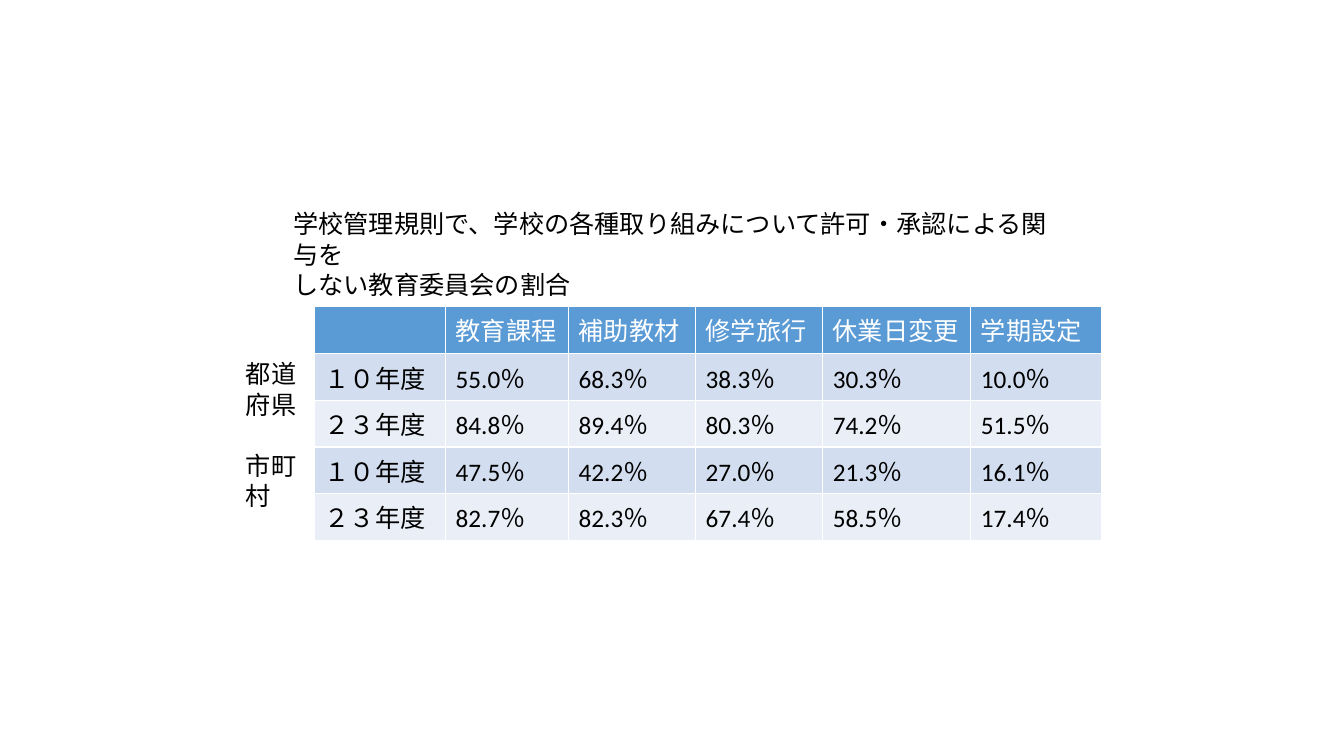
from dataclasses import dataclass

from pptx import Presentation
from pptx.dml.color import RGBColor
from pptx.util import Emu, Pt

EMU_PER_PX = 9144  # 100 px to the inch
FONT = "Calibri"
FONT_SIZE = Pt(18)
COLORS = {
    "header": "5B9BD5",
    "header_text": "FFFFFF",
    "text": "000000",
    "odd_row": "D2DEEF",
    "even_row": "EAEFF7",
}


@dataclass(frozen=True)
class Box:
    left: int
    top: int
    width: int
    height: int


@dataclass(frozen=True)
class TextBlock:
    box: Box
    lines: tuple[str, ...]
    gap: int = 0  # points before each line after the first


TABLE_BOX = Box(312, 304, 781, 231)
COLUMN_WIDTHS = (130, 122, 126, 126, 147, 130)
ROW_HEIGHTS = (47, 46, 46, 46, 46)
HEADINGS = ("", "教育課程", "補助教材", "修学旅行", "休業日変更", "学期設定")
RATES = (
    ("１０年度", 55.0, 68.3, 38.3, 30.3, 10.0),
    ("２３年度", 84.8, 89.4, 80.3, 74.2, 51.5),
    ("１０年度", 47.5, 42.2, 27.0, 21.3, 16.1),
    ("２３年度", 82.7, 82.3, 67.4, 58.5, 17.4),
)
TEXT_BLOCKS = (
    TextBlock(
        Box(281, 202, 779, 71),
        ("学校管理規則で、学校の各種取り組みについて許可・承認による関与を",
         "しない教育委員会の割合"),
    ),
    TextBlock(Box(234, 351, 71, 162), ("都道府県", "市町村"), gap=22),
)


def px(length: int) -> Emu:
    return Emu(length * EMU_PER_PX)


def place(box: Box) -> tuple[Emu, Emu, Emu, Emu]:
    return px(box.left), px(box.top), px(box.width), px(box.height)


def color(key: str) -> RGBColor:
    return RGBColor.from_string(COLORS[key])


def format_text(paragraph, color_key: str) -> None:
    for font in [paragraph.font] + [run.font for run in paragraph.runs]:
        font.name = FONT
        font.size = FONT_SIZE
        font.bold = False
        font.color.rgb = color(color_key)


def add_text(slide, block: TextBlock) -> None:
    frame = slide.shapes.add_textbox(*place(block.box)).text_frame
    frame.word_wrap = True
    frame.text = "\n".join(block.lines)
    for index, paragraph in enumerate(frame.paragraphs):
        format_text(paragraph, "text")
        if index and block.gap:
            paragraph.space_before = Pt(block.gap)


def add_rate_table(slide) -> None:
    rows = [HEADINGS] + [
        (year, *(f"{rate:.1f}％" for rate in rates)) for year, *rates in RATES
    ]
    table = slide.shapes.add_table(
        len(rows), len(HEADINGS), *place(TABLE_BOX)
    ).table
    for column, width in zip(table.columns, COLUMN_WIDTHS):
        column.width = px(width)
    for row, height in zip(table.rows, ROW_HEIGHTS):
        row.height = px(height)

    for row_index, texts in enumerate(rows):
        if row_index == 0:
            fill_key, text_key = "header", "header_text"
        else:
            fill_key = "odd_row" if row_index % 2 else "even_row"
            text_key = "text"
        for column_index, text in enumerate(texts):
            cell = table.cell(row_index, column_index)
            cell.fill.solid()
            cell.fill.fore_color.rgb = color(fill_key)
            cell.text_frame.text = text
            format_text(cell.text_frame.paragraphs[0], text_key)


def main() -> None:
    presentation = Presentation()
    presentation.slide_width = px(1333)
    presentation.slide_height = px(750)
    slide = presentation.slides.add_slide(presentation.slide_layouts[6])
    add_rate_table(slide)
    for block in TEXT_BLOCKS:
        add_text(slide, block)
    presentation.save("out.pptx")


if __name__ == "__main__":
    main()
